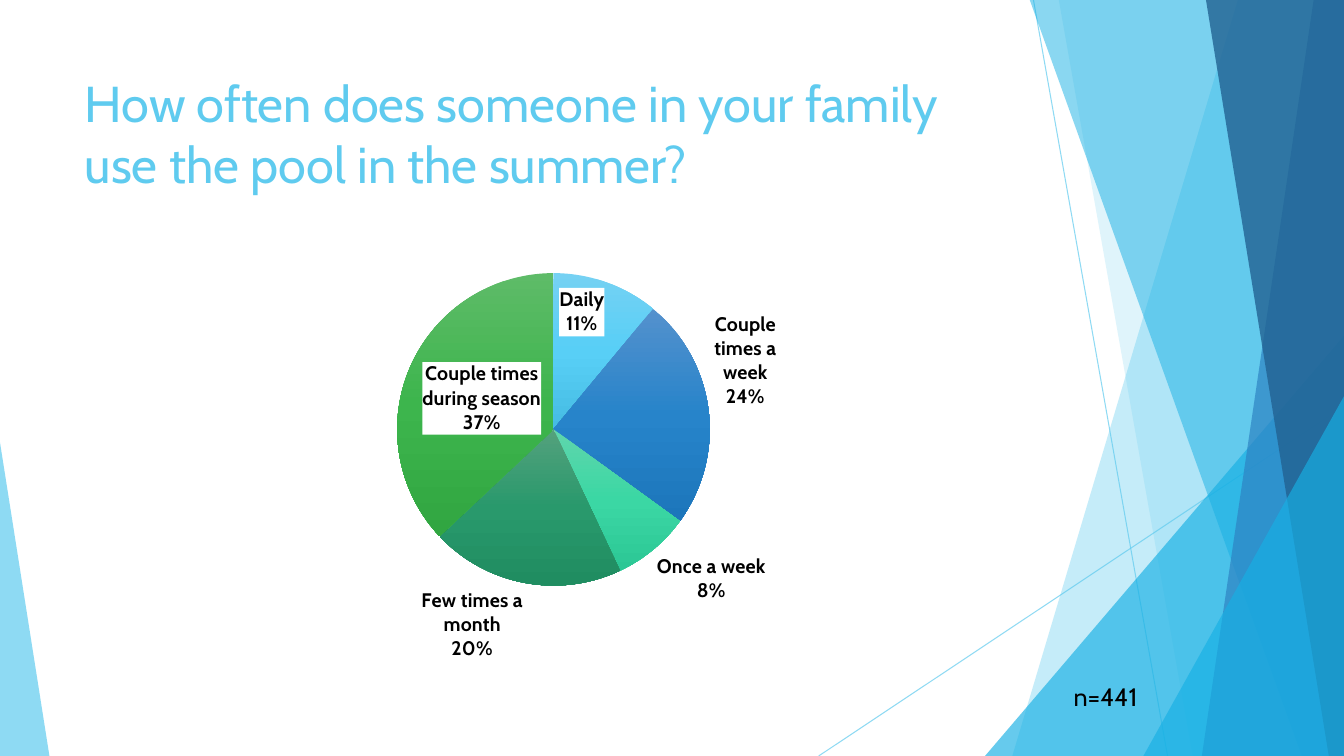
import copy

import pptx
import pptx.chart.data
import pptx.dml.color
import pptx.enum.chart
import pptx.enum.dml
import pptx.enum.shapes
import pptx.enum.text
import pptx.oxml
import pptx.oxml.ns
import pptx.util

Inches = pptx.util.Inches
LabelPosition = pptx.enum.chart.XL_LABEL_POSITION

TITLE = "How often does someone in your family use the pool in the summer?"
SAMPLE_SIZE = "n=441"

# category, percent, gradient from top to bottom, label position, white label box
ANSWERS = [
    ("Daily", 11, ("75D1F3", "58CFF6", "45BCE3"), LabelPosition.INSIDE_END, True),
    ("Couple times a week", 24, ("5491CD", "2784CA", "1C76BB"), LabelPosition.OUTSIDE_END, False),
    ("Once a week", 8, ("60D6AC", "3BD7A4", "2CC795"), LabelPosition.OUTSIDE_END, False),
    ("Few times a month", 20, ("54A17D", "29996C", "208D61"), LabelPosition.OUTSIDE_END, False),
    ("Couple times during season", 37, ("5EBB68", "3DB54D", "31A641"), LabelPosition.CENTER, True),
]

THEME = {
    "font": "Cabin", "text": "000000", "paper": "FFFFFF",
    "sky": "5FCBEF", "cyan": "17B0E4", "blue": "2E83C3", "navy": "226292",
    "title": 36, "note": 18, "label": 14, "chart": 10, "hairline": 0.75,
}

WIDTH, HEIGHT, BLEED = 13.33, 7.5, -0.01

# start, end
HAIRLINES = [((10.25, 0), (11.58, HEIGHT)), ((WIDTH, 4.03), (8.12, HEIGHT))]
# A band reaches from a slanted left edge (top x, bottom x) to the slide's right side;
# a wedge is a right triangle (left, top, width, peak position) standing on the bottom.
DECORATION = [
    ("band", (12.28, 10.04), "sky", 36),
    ("band", (10.5, 11.83), "sky", 20),
    ("wedge", (9.77, 3.33, 3.56, 1), "cyan", 66),
    ("band", (10.21, 12.91), "cyan", 50),
    ("band", (13.03, 11.92), "blue", 70),
    ("band", (11.96, 13.18), "navy", 80),
    ("wedge", (11.34, 3.93, 1.99, 1), "cyan", 66),
    ("wedge", (0, 4.39, 0.49, 0), "sky", 70),
]

TITLE_BOX = (0.74, 0.67, 9.4, 1.44)
CHART_BOX = (2.33, 2, 5.85, 4.71)
NOTE_BOX = (10.55, 6.71, 1.91, 0.4)
PIE_BOX = (3.94, 2.71, 3.1, 3.1)


def rgb(value):
    return pptx.dml.color.RGBColor.from_string(value)


def inches(values):
    return [Inches(value) for value in values]


def set_font(font, size, color="text", bold=False):
    formats = {"name": THEME["font"], "size": pptx.util.Pt(THEME[size]), "bold": bold}
    for name, value in formats.items():
        setattr(font, name, value)
    font.color.rgb = rgb(THEME[color])


def add_element(parent, tag, **attributes):
    child = pptx.oxml.parse_xml(f"<{tag} {pptx.oxml.ns.nsdecls('a', 'c')}/>")
    for name, value in attributes.items():
        child.set(name, str(value))
    parent.append(child)
    return child


def set_opacity(shape, percent):
    for color in shape._element.spPr.xpath(".//a:srgbClr"):
        add_element(color, "a:alpha", val=percent * 1000)


def add_hairline(slide, start, end):
    line = slide.shapes.add_connector(
        pptx.enum.shapes.MSO_CONNECTOR.STRAIGHT, *inches(start + end))
    line.line.color.rgb = rgb(THEME["sky"])
    line.line.width = pptx.util.Pt(THEME["hairline"])
    set_opacity(line, 70)
    add_element(line._element.spPr, "a:effectLst")


def add_band(slide, top_x, bottom_x):
    corners = [(WIDTH, BLEED), (WIDTH, HEIGHT), (bottom_x, HEIGHT)]
    builder = slide.shapes.build_freeform(Inches(top_x), Inches(BLEED))
    builder.add_line_segments([inches(corner) for corner in corners], close=True)
    return builder.convert_to_shape()


def add_wedge(slide, left, top, width, peak):
    shape = slide.shapes.add_shape(
        pptx.enum.shapes.MSO_SHAPE.ISOSCELES_TRIANGLE,
        *inches((left, top, width, HEIGHT - top)))
    shape.adjustments[0] = peak
    return shape


def add_decoration(slide):
    for start, end in HAIRLINES:
        add_hairline(slide, start, end)
    makers = {"band": add_band, "wedge": add_wedge}
    for kind, geometry, color, opacity in DECORATION:
        shape = makers[kind](slide, *geometry)
        shape.shadow.inherit = False
        shape.fill.solid()
        shape.fill.fore_color.rgb = rgb(THEME[color])
        shape.line.fill.background()
        set_opacity(shape, opacity)


def add_title(slide):
    title = slide.shapes.title
    for name, value in zip(("left", "top", "width", "height"), inches(TITLE_BOX)):
        setattr(title, name, value)
    frame = title.text_frame
    frame.text = TITLE
    formats = {"word_wrap": True, "auto_size": pptx.enum.text.MSO_AUTO_SIZE.NONE,
               "vertical_anchor": pptx.enum.text.MSO_ANCHOR.TOP}
    for name, value in formats.items():
        setattr(frame, name, value)
    paragraph = frame.paragraphs[0]
    paragraph.alignment = pptx.enum.text.PP_ALIGN.LEFT
    set_font(paragraph.runs[0].font, "title", "sky")


def place_pie(chart):
    """Fix the pie's square inside the chart frame."""
    area = chart._chartSpace.xpath("c:chart/c:plotArea")[0]
    for layout in area.xpath("c:layout"):
        area.remove(layout)
    layout = add_element(area, "c:layout")
    area.insert(0, layout)
    manual = add_element(layout, "c:manualLayout")
    left, top, width, height = CHART_BOX
    pie_left, pie_top, pie_width, pie_height = PIE_BOX
    values = {
        "layoutTarget": "inner", "xMode": "edge", "yMode": "edge",
        "x": (pie_left - left) / width, "y": (pie_top - top) / height,
        "w": pie_width / width, "h": pie_height / height,
    }
    for name, value in values.items():
        add_element(manual, f"c:{name}", val=value)


def paint_slice(series, index, colors):
    fill = series.points[index].format.fill
    fill.gradient()
    fill.gradient_angle = 270
    stops = series._element.xpath(f"c:dPt[c:idx/@val='{index}']//a:gsLst")[0]
    stops.append(copy.deepcopy(stops[-1]))
    for number, (stop, color) in enumerate(zip(fill.gradient_stops, colors)):
        stop.position = number / 2
        stop.color.rgb = rgb(color)


def label_slice(series, index, position, boxed):
    label = series.points[index].data_label
    set_font(label.font, "label", bold=True)
    label.position = position
    element = series._element.xpath(f"c:dLbls/c:dLbl[c:idx/@val='{index}']")[0]
    for name, value in {"showVal": 0, "showCatName": 1, "showPercent": 1}.items():
        element.xpath(f"c:{name}")[0].set("val", str(value))
    add_element(element, "c:separator").text = "\n"
    text_format = element.xpath("c:txPr")[0]
    for old in element.xpath("c:spPr"):
        element.remove(old)
    text_format.addprevious(add_element(element, "c:numFmt", formatCode="0%", sourceLinked=0))
    if boxed:
        box = add_element(element, "c:spPr")
        add_element(add_element(box, "a:solidFill"), "a:srgbClr", val=THEME["paper"])
        text_format.addprevious(box)


def add_pie(slide):
    data = pptx.chart.data.CategoryChartData()
    data.categories = [answer[0] for answer in ANSWERS]
    data.add_series("Series 1", [answer[1] for answer in ANSWERS])
    chart = slide.shapes.add_chart(
        pptx.enum.chart.XL_CHART_TYPE.PIE, *inches(CHART_BOX), data).chart
    chart.has_title = False
    chart.has_legend = False
    set_font(chart.font, "chart")
    place_pie(chart)
    plot = chart.plots[0]
    plot.vary_by_categories = True
    for index, (_, _, colors, position, boxed) in enumerate(ANSWERS):
        paint_slice(plot.series[0], index, colors)
        label_slice(plot.series[0], index, position, boxed)


def add_sample_size(slide):
    frame = slide.shapes.add_textbox(*inches(NOTE_BOX)).text_frame
    frame.word_wrap = True
    frame.auto_size = pptx.enum.text.MSO_AUTO_SIZE.SHAPE_TO_FIT_TEXT
    frame.text = SAMPLE_SIZE
    set_font(frame.paragraphs[0].runs[0].font, "note")


def main():
    presentation = pptx.Presentation()
    presentation.slide_width, presentation.slide_height = inches((WIDTH, HEIGHT))
    slide = presentation.slides.add_slide(presentation.slide_layouts.get_by_name("Title Only"))
    add_decoration(slide)
    add_title(slide)
    add_pie(slide)
    add_sample_size(slide)
    presentation.save("out.pptx")


if __name__ == "__main__":
    main()
